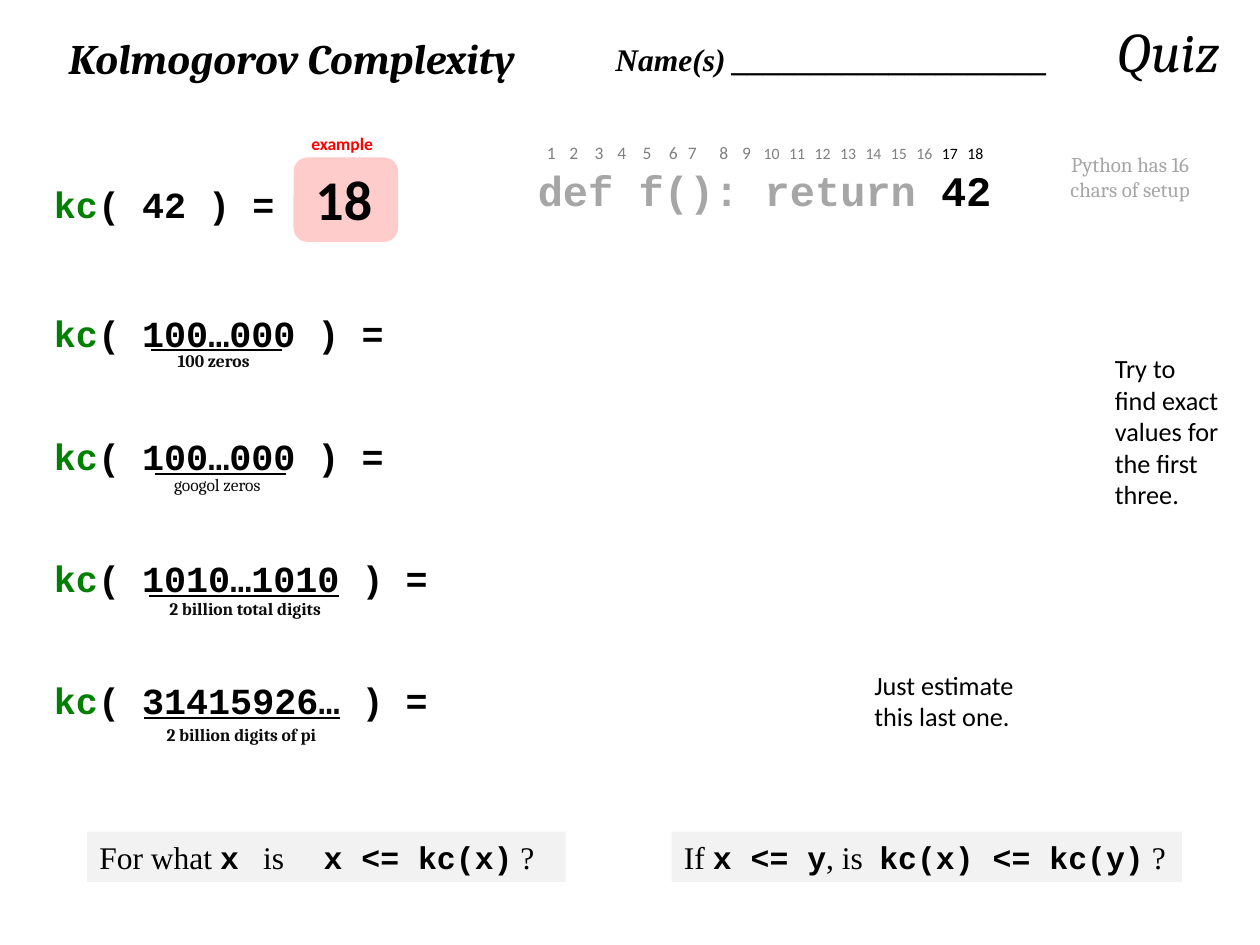
from lxml import etree
from pptx import Presentation
from pptx.dml.color import RGBColor
from pptx.enum.shapes import MSO_CONNECTOR as Connector, MSO_SHAPE as Shape
from pptx.enum.text import MSO_ANCHOR as Anchor, MSO_AUTO_SIZE as AutoSize, PP_ALIGN as Align
from pptx.oxml.ns import qn
from pptx.util import Inches, Pt

BLACK, INK, GREEN, RED = "000000", "0D0D0D", "008000", "FF0000"
GRAY, PALE_GRAY, PANEL, PINK = "808080", "A6A6A6", "F2F2F2", "FFCCCC"
SANS, SERIF, CODE, TIMES = "Calibri", "Cambria", "Courier New", "Times New Roman"


def color(hex_value):
    return RGBColor.from_string(hex_value)


def style_font(font, name, size, ink=BLACK, bold=False, italic=False):
    font.name, font.size = name, Pt(size)
    font.bold, font.italic = bold, italic
    font.color.rgb = color(ink)


class QuizSlide:
    def __init__(self, presentation):
        self.shapes = presentation.slides.add_slide(presentation.slide_layouts[6]).shapes

    def frame(self, shape, align, wrap):
        text_frame = shape.text_frame
        text_frame.word_wrap = wrap
        text_frame.auto_size = AutoSize.SHAPE_TO_FIT_TEXT
        text_frame.vertical_anchor = Anchor.TOP
        paragraph = text_frame.paragraphs[0]
        paragraph.alignment = align
        return paragraph

    def runs(self, paragraph, pieces):
        """Each piece is (text, font, size, colour, bold)."""
        for text, *style in pieces:
            run = paragraph.add_run()
            run.text = text
            style_font(run.font, *style)

    def box(self, at, align, wrap):
        return self.frame(self.shapes.add_textbox(*map(Inches, at)), align, wrap)

    def label(self, at, text, name, size, ink=BLACK, bold=False, italic=False,
              align=Align.LEFT, wrap=True):
        paragraph = self.box(at, align, wrap)
        paragraph.text = text
        style_font(paragraph.font, name, size, ink, bold, italic)

    def code(self, at, pieces, wrap=True):
        self.runs(self.box(at, Align.LEFT, wrap), pieces)

    def block(self, kind, at, fill):
        shape = self.shapes.add_shape(kind, *map(Inches, at))
        shape.shadow.inherit = False
        shape.fill.solid()
        shape.fill.fore_color.rgb = color(fill)
        shape.line.fill.background()
        return shape

    def question(self, at, pieces, tab_stops):
        panel = self.block(Shape.RECTANGLE, at, PANEL)
        paragraph = self.frame(panel, Align.LEFT, True)
        panel.text_frame.margin_right = 0
        properties = paragraph._p.get_or_add_pPr()
        tabs = etree.SubElement(properties, qn("a:tabLst"))
        for stop in tab_stops:
            etree.SubElement(tabs, qn("a:tab"), pos=str(Inches(stop)), algn="l")
        self.runs(paragraph, pieces)

    def underline(self, left, right, top):
        line = self.shapes.add_connector(Connector.STRAIGHT, *map(Inches, (left, top, right, top)))
        line.line.color.rgb = color(BLACK)
        line.line.width = Pt(1)
        etree.SubElement(line._element.spPr, qn("a:effectLst"))


def kc_start(rest):
    return [("kc", CODE, 21, GREEN, True), (rest, CODE, 21, BLACK, True)]


def prose(text):
    return text, TIMES, 18, BLACK, False


def formula(text):
    return text, CODE, 18, BLACK, True


def main():
    presentation = Presentation()
    presentation.slide_width, presentation.slide_height = Inches(10), Inches(7.5)
    quiz = QuizSlide(presentation)

    # Heading
    quiz.label((0.23, 0.21, 4.17, 0.51), "Kolmogorov Complexity", SERIF, 24,
               bold=True, italic=True, align=Align.CENTER)
    quiz.label((4.25, 0.27, 4.17, 0.4), "Name(s) " + "_" * 20, TIMES, 18,
               bold=True, italic=True, align=Align.RIGHT)
    quiz.label((7.95, 0.08, 1.83, 0.64), "Quiz", SERIF, 32, italic=True, align=Align.RIGHT)

    # Worked example
    quiz.block(Shape.ROUNDED_RECTANGLE, (2.33, 1.25, 0.83, 0.67), PINK)
    quiz.label((2.31, 1.01, 0.81, 0.27), "example", SANS, 10, RED, bold=True, align=Align.CENTER)
    quiz.label((2.35, 1.26, 0.76, 0.64), "18", SANS, 32, bold=True,
               align=Align.CENTER, wrap=False)
    quiz.code((0.33, 1.39, 2, 0.45), kc_start("( 42 ) ="))
    quiz.code((4.17, 1.26, 3.83, 0.51), [("def f(): return ", CODE, 24, PALE_GRAY, True),
                                         ("42", CODE, 24, BLACK, True)], wrap=False)
    quiz.label((8.34, 1.15, 1.26, 0.51), "Python has 16 chars of setup", SERIF, 12,
               PALE_GRAY, align=Align.CENTER)

    # Character counts: single digits follow the visible letters, the rest are evenly spaced
    single_digits = (4.24, 4.42, 4.62, 4.8, 5, 5.21, 5.36, 5.61, 5.79)
    for count, left in enumerate(single_digits, start=1):
        quiz.label((left, 1.08, 0.27, 0.27), str(count), SANS, 10, GRAY,
                   align=Align.CENTER, wrap=False)
    for count in range(10, 19):
        quiz.label((5.96 + 0.2 * (count - 10) * 1.01, 1.09, 0.33, 0.25), str(count), SANS, 9,
                   GRAY if count <= 16 else BLACK, align=Align.CENTER, wrap=False)

    # Exercises: digits before and after the ellipsis, underline, caption and its place
    exercises = [
        ("100", "000", (1.2, 2.24, 2.78), "100 zeros", (0.88, 2.73), True),
        ("100", "000", (1.23, 2.27, 3.76), "googol zeros", (0.91, 3.71), False),
        ("1010", "1010", (1.18, 2.69, 4.73), "2 billion total digits", (1.13, 4.7), True),
        ("31415926", "", (1.14, 2.7, 5.7), "2 billion digits of pi", (1.1, 5.7), True),
    ]
    for row, (first, last, rule, caption, place, bold) in enumerate(exercises):
        quiz.code((0.33, 2.42 + 0.97 * row, 3.5, 0.45), kc_start("( " + first) + [
            ("…", CODE, 20, INK, True), (last + " ) =", CODE, 21, BLACK, True)])
        quiz.label((*place, 1.63, 0.27), caption, SERIF, 10, INK, bold, align=Align.CENTER)
        quiz.underline(*rule)

    # Hints
    quiz.label((8.75, 2.75, 1.03, 1.36), "Try to find exact values for the first three.", SANS, 15)
    quiz.label((6.84, 5.26, 1.35, 0.61), "Just estimate this last one.", SANS, 15)

    # Closing questions
    quiz.question((0.69, 6.6, 3.8, 0.4), [
        prose("For what "), formula("x"), prose("\tis\t"), formula("x <= kc(x)"), prose(" ?"),
    ], (1.3, 1.78))
    quiz.question((5.33, 6.6, 4.05, 0.4), [
        prose("If "), formula("x <= y"), prose(", is\t"), formula("kc(x) <= kc(y)"), prose(" ?"),
    ], (1.55,))

    presentation.save("out.pptx")


if __name__ == "__main__":
    main()
